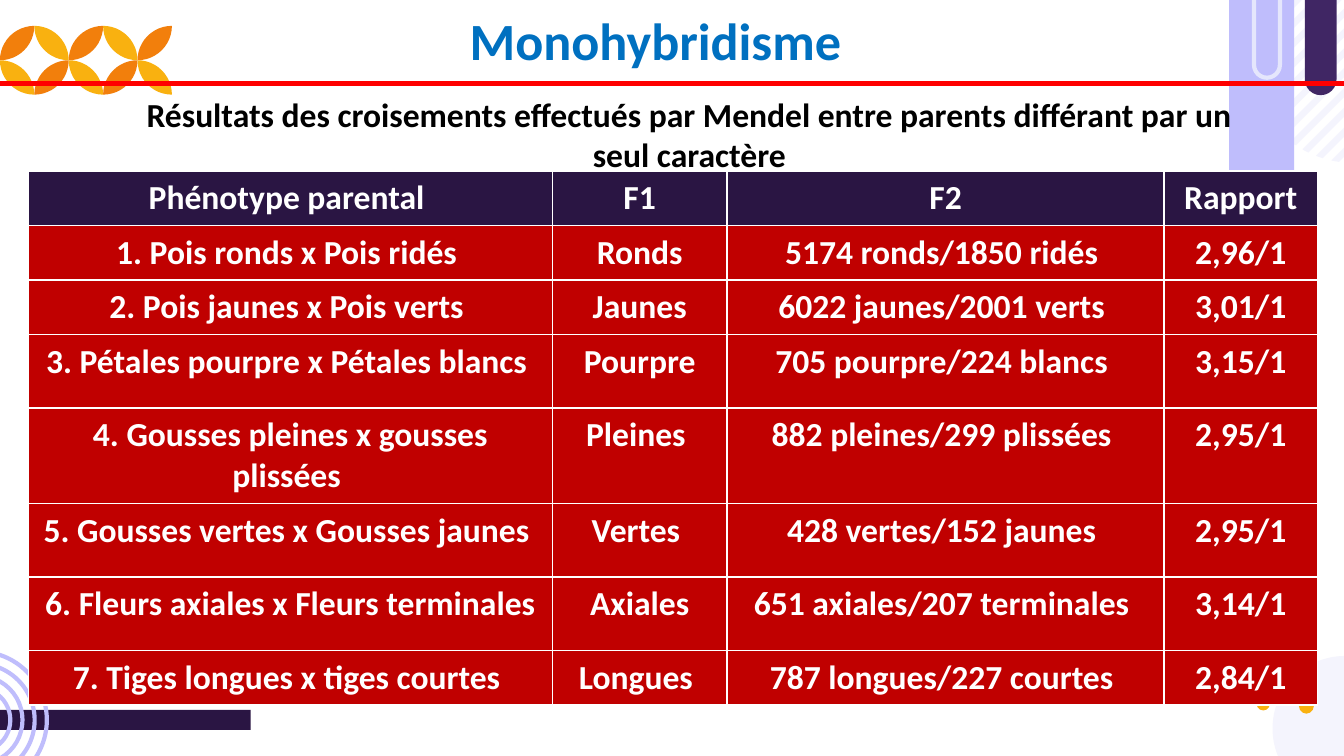
import math
import lxml.etree
import pptx
import pptx.dml.color
import pptx.enum.shapes
import pptx.enum.text
import pptx.oxml.ns
import pptx.util

Cm, Pt = pptx.util.Cm, pptx.util.Pt
KIND = pptx.enum.shapes.MSO_SHAPE
ANCHOR = pptx.enum.text.MSO_ANCHOR
qn = pptx.oxml.ns.qn
RGB = pptx.dml.color.RGBColor.from_string

HUES = {
    "night": "2A1543", "plum": "402664", "lilac": "BFBDFC", "mist": "F4F4FD",
    "clip": "E5E6FC", "orange": "F27F0C", "gold": "F9B110", "red": "FF0000",
    "brick": "C00000", "blue": "0070C0", "black": "000000", "white": "FFFFFF",
}
BOLD = {"name": "Calibri", "size": Pt(18), "bold": True}


def paint(shape, fill=None, line=None):
    shape.shadow.inherit = False
    if fill:
        shape.fill.solid()
        shape.fill.fore_color.rgb = RGB(HUES[fill])
    else:
        shape.fill.background()
    if line:
        shape.line.color.rgb = RGB(HUES[line])
        shape.line.width = Pt(2.25)
    else:
        shape.line.fill.background()


def write(frame, text, hue, form):
    para = frame.paragraphs[0]
    para.alignment = pptx.enum.text.PP_ALIGN.CENTER
    run = para.add_run()
    run.text = text
    for key, value in form.items():
        setattr(run.font, key, value)
    run.font.color.rgb = RGB(HUES[hue])


deck = pptx.Presentation()
deck.slide_width, deck.slide_height = Cm(25.4), Cm(14.29)
slide = deck.slides.add_slide(deck.slide_layouts[5])
shapes = slide.shapes

# Bottom bar, pale disc and dots: kind, left, top, width, height, fill
for kind, x, y, w, h, fill in [
    (KIND.RECTANGLE, -0.66, 13.42, 5.4, 0.38, "night"),
    (KIND.OVAL, 24.05, 12.4, 2.74, 2.74, "mist"),
    (KIND.OVAL, 23.94, 12.4, 0.23, 0.23, "gold"),
    (KIND.OVAL, 23.75, 13.18, 0.25, 0.25, "gold"),
    (KIND.OVAL, 24.22, 12.8, 0.3, 0.3, "gold"),
    (KIND.OVAL, 24.55, 13.21, 0.28, 0.28, "gold"),
    (KIND.OVAL, 24.55, 12.45, 0.28, 0.28, "gold"),
]:
    paint(shapes.add_shape(kind, Cm(x), Cm(y), Cm(w), Cm(h)), fill)

# Concentric rings
for i in range(4):
    size = 2.59 - 0.46 * i
    ring = shapes.add_shape(KIND.OVAL, Cm(-0.41 - size / 2), Cm(13.61 - size / 2),
                            Cm(size), Cm(size))
    paint(ring, line="lilac")

# Outlines: diagonal stripes cut by a circle, then petals
plots = []
mid_x, mid_y, rad = 25.58, 1.12, 1.96
for i in range(12):
    ends = []
    for gap, sign in [(0, 1), (0, -1), (0.17, -1), (0.17, 1)]:
        off = (24.06 + 0.376 * i + gap - mid_x - mid_y) / 2
        half = math.sqrt(max(rad ** 2 / 2 - off ** 2, 0))
        ends.append((mid_x + off + sign * half, mid_y + off - sign * half))
    plots.append((ends, "mist"))

side, steps = 0.65, 12
turns = [math.pi / 2 * i / steps for i in range(steps + 1)]
lens = [(1 - math.sin(t), 1 - math.cos(t)) for t in turns]
lens += [(math.sin(t), math.cos(t)) for t in turns[1:]]
for col in range(5):
    for row in range(2):
        flip = (col + row) % 2
        ends = [((col + (1 - x if flip else x)) * side, 0.49 + (row + y) * side)
                for x, y in lens]
        plots.append((ends, "gold" if flip else "orange"))

for ends, fill in plots:
    spots = [(Cm(x), Cm(y)) for x, y in ends]
    pen = shapes.build_freeform(*spots[0], scale=1.0)
    pen.add_line_segments(spots[1:], close=True)
    paint(pen.convert_to_shape(), fill)

# Hanging tabs with a round lower end
for x, w, h, fill, line in [
    (24.66, 0.6, 1.88, "plum", None),
    (23.23, 1.23, 3.91, "lilac", None),
    (23.7, 0.49, 1.55, None, "clip"),
]:
    tab = shapes.add_shape(KIND.ROUND_2_SAME_RECTANGLE, Cm(x), Cm(-0.08), Cm(w), Cm(h))
    tab.adjustments[0], tab.adjustments[1] = 0, 0.5
    paint(tab, fill, line)

# Links between dots, and the red rule
for x1, y1, x2, y2, hue, wide in [
    (24.05, 12.51, 24.37, 12.95, "gold", 1.5),
    (23.88, 13.3, 24.37, 12.95, "gold", 1.5),
    (24.69, 13.35, 24.37, 12.95, "gold", 1.5),
    (24.69, 12.59, 24.37, 12.95, "gold", 1.5),
    (0, 1.58, 25.4, 1.58, "red", 3),
]:
    link = shapes.add_connector(pptx.enum.shapes.MSO_CONNECTOR.STRAIGHT,
                                Cm(x1), Cm(y1), Cm(x2), Cm(y2))
    link.line.color.rgb = RGB(HUES[hue])
    link.line.width = Pt(wide)
    lxml.etree.SubElement(link.element.spPr, qn("a:effectLst"))

# Title
title = shapes.title
place = {"left": Cm(8.51), "top": Cm(0.03), "width": Cm(7.75), "height": Cm(1.45)}
for key, value in place.items():
    setattr(title, key, value)
frame = title.text_frame
for key, value in {"word_wrap": False, "vertical_anchor": ANCHOR.TOP,
                   "auto_size": pptx.enum.text.MSO_AUTO_SIZE.NONE}.items():
    setattr(frame, key, value)
write(frame, "Monohybridisme", "blue", {**BOLD, "size": Pt(28)})

# Table of crosses
rows = [
    ("Phénotype parental ", " F1 ", "F2", "Rapport"),
    ("1. Pois ronds x Pois ridés ", " Ronds ", "5174 ronds/1850 ridés ", "2,96/1"),
    ("2. Pois jaunes x Pois verts ", "Jaunes", "6022 jaunes/2001 verts ", "3,01/1"),
    ("3. Pétales pourpre x Pétales blancs ", "Pourpre", "705 pourpre/224 blancs ", "3,15/1"),
    ("4. Gousses pleines x gousses plissées ", "Pleines ", "882 pleines/299 plissées ", "2,95/1"),
    ("5. Gousses vertes x Gousses jaunes ", "Vertes ", "428 vertes/152 jaunes ", "2,95/1"),
    ("6. Fleurs axiales x Fleurs terminales ", "Axiales", "651 axiales/207 terminales ", "3,14/1"),
    ("7. Tiges longues x tiges courtes ", "Longues ", "787 longues/227 courtes ", "2,84/1"),
]
wides = [9.9, 3.3, 8.26, 2.9]
talls = [1.01, 1.01, 1.01, 1.39, 1.78, 1.39, 1.39, 1.01]
grid = shapes.add_table(len(rows), len(wides), Cm(0.54), Cm(3.23),
                        Cm(sum(wides)), Cm(sum(talls))).table
grid.horz_banding = False
for col, wide in zip(grid.columns, wides):
    col.width = Cm(wide)
for r, texts in enumerate(rows):
    grid.rows[r].height = Cm(talls[r])
    for c, text in enumerate(texts):
        cell = grid.cell(r, c)
        cell.fill.solid()
        cell.fill.fore_color.rgb = RGB(HUES["brick" if r else "night"])
        write(cell.text_frame, text, "white", BOLD)
        props = cell._tc.get_or_add_tcPr()
        for i, edge in enumerate(["a:lnL", "a:lnR", "a:lnT", "a:lnB"]):
            line = lxml.etree.Element(qn(edge), w=str(Pt(1)))
            fill = lxml.etree.SubElement(line, qn("a:solidFill"))
            lxml.etree.SubElement(fill, qn("a:srgbClr"), val=HUES["white"])
            props.insert(i, line)

# Caption above the table
note = shapes.add_textbox(Cm(2.26), Cm(1.63), Cm(21.54), Cm(1.8)).text_frame
note.word_wrap = True
note.vertical_anchor = ANCHOR.MIDDLE
write(note, "Résultats des croisements effectués par Mendel entre parents différant "
      "par un seul caractère", "black", BOLD)

deck.save("out.pptx")
